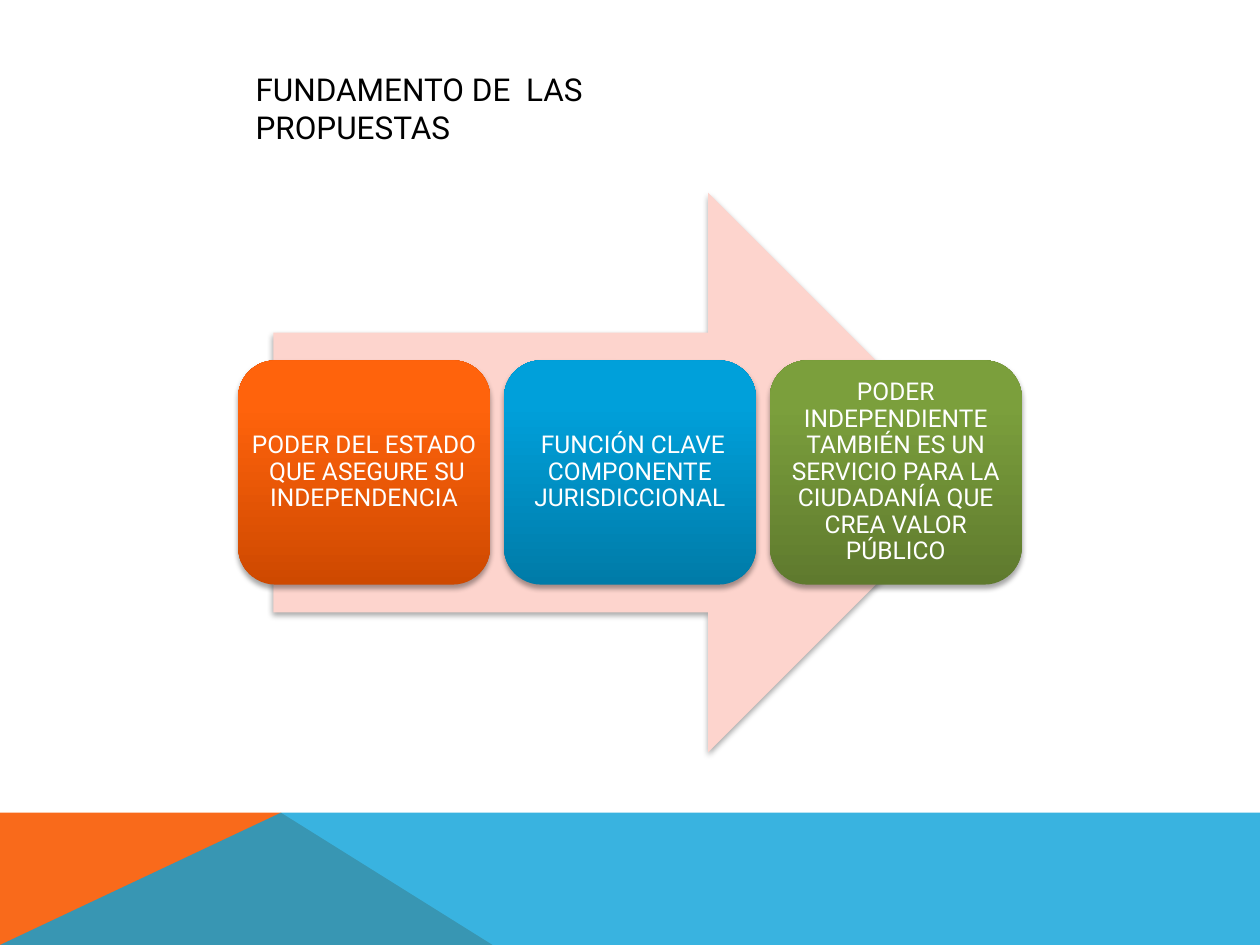
"""Build the slide on the foundations of the proposals."""
from dataclasses import dataclass

from lxml.etree import SubElement
from pptx import Presentation
from pptx.dml.color import RGBColor
from pptx.enum.shapes import MSO_SHAPE
from pptx.enum.text import MSO_ANCHOR, PP_ALIGN
from pptx.oxml.ns import qn
from pptx.util import Inches, Pt


@dataclass(frozen=True)
class Theme:
    font: str = "Roboto"
    title_size: int = 18
    box_size: int = 14
    black: str = "000000"
    white: str = "FFFFFF"
    arrow: str = "FDD4CD"
    band_orange: str = "F96A1B"
    band_blue: str = "08A1D9"
    orange: tuple = ("CE4900", "FF630C")
    blue: tuple = ("007BA8", "00A0DA")
    green: tuple = ("5F7A2E", "7B9F3C")


def write_text(shape, text, *, size, color, align=PP_ALIGN.LEFT,
               anchor=MSO_ANCHOR.TOP, margin=None, line_spacing=None):
    frame = shape.text_frame
    frame.word_wrap = True
    frame.vertical_anchor = anchor
    if margin is not None:
        frame.margin_left = frame.margin_right = margin
        frame.margin_top = frame.margin_bottom = margin
    paragraph = frame.paragraphs[0]
    paragraph.alignment = align
    paragraph.line_spacing = line_spacing
    run = paragraph.add_run()
    run.text = text
    run.font.name = theme.font
    run.font.size = Pt(size)
    run.font.color.rgb = RGBColor.from_string(color)


def add_soft_shadow(shape):
    shape.shadow.inherit = False
    effects = shape.element.spPr.find(qn("a:effectLst"))
    shadow = SubElement(effects, qn("a:outerShdw"), blurRad=str(Pt(3.1)),
                        dist=str(Pt(1.8)), dir="5400000", rotWithShape="0")
    color = SubElement(shadow, qn("a:srgbClr"), val=theme.black)
    SubElement(color, qn("a:alpha"), val="35000")


theme = Theme()
presentation = Presentation()
presentation.slide_width, presentation.slide_height = Inches(10), Inches(7.5)
slide = presentation.slides.add_slide(presentation.slide_layouts[6])
shapes = slide.shapes

band_top, band_bottom, peak = 6.45, 7.5, 2.23
bands = [
    (theme.band_orange, 100,
     [(0, band_bottom), (0, band_top), (peak, band_top), (3.91, band_bottom)]),
    (theme.band_blue, 80,
     [(0, band_bottom), (peak, band_top), (10, band_top), (10, band_bottom)]),
]
for color, opacity, points in bands:
    corners = [(Inches(x), Inches(y)) for x, y in points]
    builder = shapes.build_freeform(*corners[0])
    builder.add_line_segments(corners[1:], close=True)
    band = builder.convert_to_shape()
    band.shadow.inherit = False
    band.line.fill.background()
    band.fill.solid()
    band.fill.fore_color.rgb = RGBColor.from_string(color)
    if opacity < 100:
        band_color = band.element.spPr.find(f"{qn('a:solidFill')}/{qn('a:srgbClr')}")
        SubElement(band_color, qn("a:alpha"), val=str(opacity * 1000))

arrow = shapes.add_shape(MSO_SHAPE.RIGHT_ARROW, Inches(2.17), Inches(1.53),
                         Inches(5.67), Inches(4.44))
arrow.fill.solid()
arrow.fill.fore_color.rgb = RGBColor.from_string(theme.arrow)
arrow.line.fill.background()
add_soft_shadow(arrow)

boxes = [
    ("PODER DEL ESTADO  QUE ASEGURE SU INDEPENDENCIA", theme.orange),
    (" FUNCIÓN CLAVE COMPONENTE JURISDICCIONAL", theme.blue),
    ("PODER INDEPENDIENTE TAMBIÉN ES UN SERVICIO PARA LA CIUDADANÍA "
     "QUE CREA VALOR PÚBLICO", theme.green),
]
box_left, box_pitch = 1.89, 2.11
for index, (text, gradient) in enumerate(boxes):
    box = shapes.add_shape(MSO_SHAPE.ROUNDED_RECTANGLE,
                           Inches(box_left + index * box_pitch), Inches(2.86),
                           Inches(2), Inches(1.78))
    box.fill.gradient()
    box.fill.gradient_angle = 90
    for stop, position, color in zip(box.fill.gradient_stops, (0, 0.8), gradient):
        stop.position = position
        stop.color.rgb = RGBColor.from_string(color)
    box.line.fill.background()
    add_soft_shadow(box)
    write_text(box, text, size=theme.box_size, color=theme.white,
               align=PP_ALIGN.CENTER, anchor=MSO_ANCHOR.MIDDLE,
               margin=Inches(0), line_spacing=0.9)

title = shapes.add_textbox(Inches(1.93), Inches(0.51), Inches(4.09), Inches(0.4))
write_text(title, "FUNDAMENTO DE  LAS PROPUESTAS",
           size=theme.title_size, color=theme.black)

presentation.save("out.pptx")
